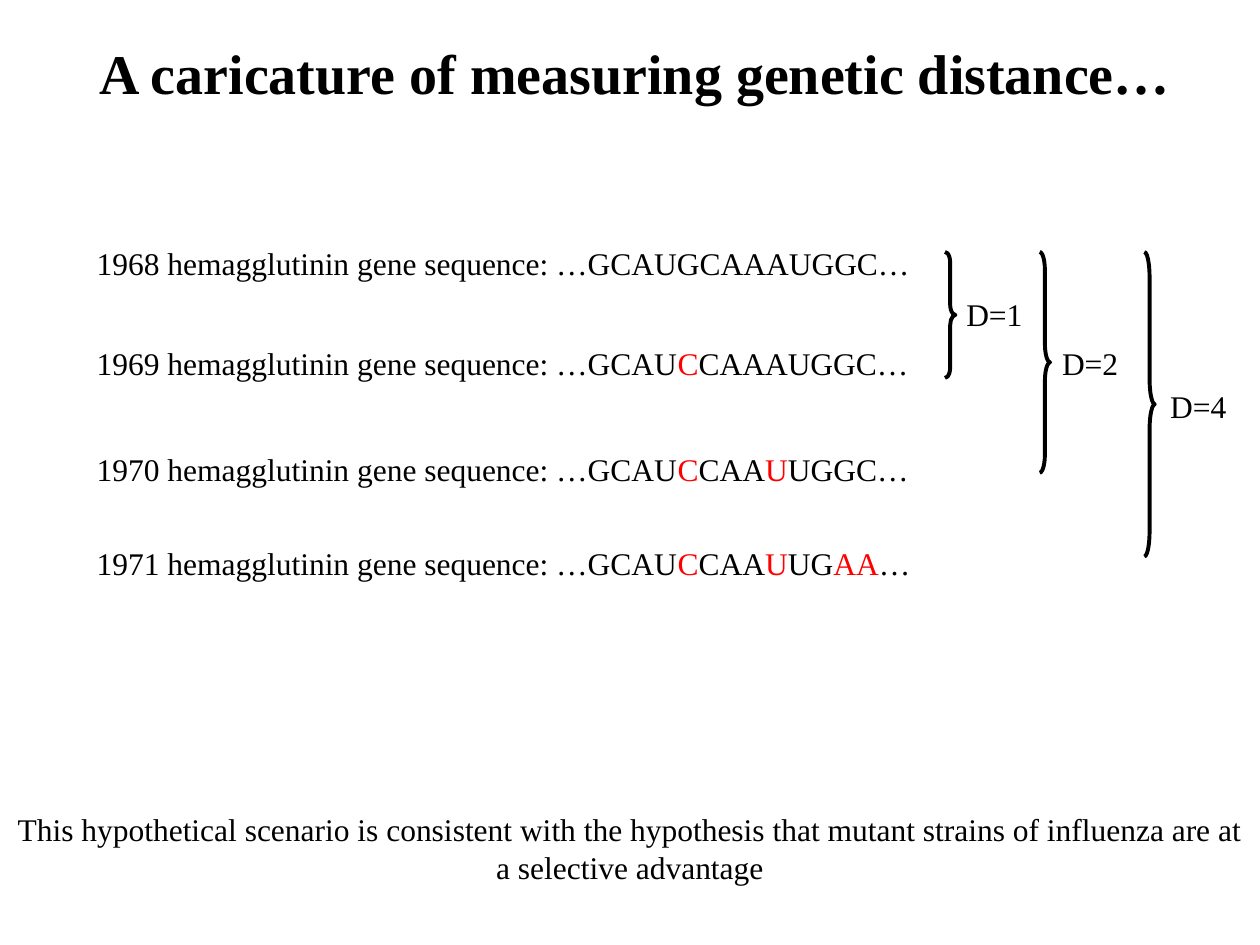
from dataclasses import dataclass
from itertools import groupby

from pptx import Presentation
from pptx import util as u
from pptx.dml.color import RGBColor
from pptx.enum import shapes, text

FONT = "Times New Roman"
BLACK = "000000"
RED = "FF0000"
SLIDE_WIDTH = 25.4
BRACE_TOP = 5.08
BRACE_WIDTH = 0.21


@dataclass
class Strain:
    year: int
    bases: str
    top: float


@dataclass
class Distance:
    """A brace from the first strain to a later one, with its label."""
    strain: Strain
    left: float
    height: float
    label_left: float
    label_top: float


STRAINS = [
    Strain(1968, "GCAUGCAAAUGGC", 4.8),
    Strain(1969, "GCAUCCAAAUGGC", 6.81),
    Strain(1970, "GCAUCCAAUUGGC", 8.94),
    Strain(1971, "GCAUCCAAUUGAA", 10.85),
]
DISTANCES = [
    Distance(STRAINS[1], 19.05, 2.54, 19.23, 5.82),
    Distance(STRAINS[2], 20.96, 4.45, 21.16, 6.81),
    Distance(STRAINS[3], 23.07, 6.14, 23.34, 7.67),
]
CONCLUSION = ("This hypothetical scenario is consistent with the hypothesis that "
              "mutant strains of influenza are at a selective advantage")


def color(value: str) -> RGBColor:
    return RGBColor.from_string(value)


def format_run(run, size: float = 18, bold: bool = False, fill: str = BLACK) -> None:
    run.font.name = FONT
    run.font.size = u.Pt(size)
    run.font.bold = bold
    run.font.color.rgb = color(fill)


def place(shape, left: float, top: float, width: float, height: float) -> None:
    shape.left, shape.top = u.Cm(left), u.Cm(top)
    shape.width, shape.height = u.Cm(width), u.Cm(height)


def add_text(slide, left: float, top: float, width: float, height: float = 1.02,
             content: str = "", wrap: bool = False):
    """Add a text box and return its first paragraph."""
    box = slide.shapes.add_textbox(u.Cm(left), u.Cm(top), u.Cm(width), u.Cm(height))
    box.text_frame.word_wrap = wrap
    paragraph = box.text_frame.paragraphs[0]
    if content:
        paragraph.text = content
        format_run(paragraph.runs[0])
    return paragraph


def mutations(strain: Strain) -> list[bool]:
    return [base != first for base, first in zip(strain.bases, STRAINS[0].bases)]


def add_title(slide) -> None:
    title = slide.shapes.title
    place(title, 0, 0.64, SLIDE_WIDTH, 1.6)
    frame = title.text_frame
    frame.text = " A caricature of measuring genetic distance…"
    frame.vertical_anchor = text.MSO_ANCHOR.TOP
    frame.auto_size = text.MSO_AUTO_SIZE.NONE
    frame.paragraphs[0].alignment = text.PP_ALIGN.CENTER
    format_run(frame.paragraphs[0].runs[0], size=32, bold=True)


def add_strain(slide, strain: Strain) -> None:
    """Write the sequence, with its mutated bases in red."""
    paragraph = add_text(slide, 1.7, strain.top, 17.05)
    pieces = [(f"{strain.year} hemagglutinin gene sequence: …", BLACK)]
    marked = zip(strain.bases, mutations(strain))
    for mutated, group in groupby(marked, key=lambda pair: pair[1]):
        pieces.append(("".join(base for base, _ in group), RED if mutated else BLACK))
    pieces.append(("…", BLACK))
    for content, fill in pieces:
        run = paragraph.add_run()
        run.text = content
        format_run(run, fill=fill)


def add_distance(slide, distance: Distance) -> None:
    brace = slide.shapes.add_shape(
        shapes.MSO_SHAPE.RIGHT_BRACE, u.Cm(distance.left), u.Cm(BRACE_TOP),
        u.Cm(BRACE_WIDTH), u.Cm(distance.height))
    brace.adjustments[0] = distance.height / 12 / BRACE_WIDTH
    brace.shadow.inherit = False
    brace.fill.background()
    brace.line.color.rgb = color(BLACK)
    brace.line.width = u.Pt(2.25)
    add_text(slide, distance.label_left, distance.label_top, 1.65,
             content=f"D={sum(mutations(distance.strain))}")


def main() -> None:
    presentation = Presentation()
    presentation.slide_width = u.Cm(SLIDE_WIDTH)
    presentation.slide_height = u.Cm(19.05)
    slide = presentation.slides.add_slide(presentation.slide_layouts[5])

    add_title(slide)
    for strain in STRAINS:
        add_strain(slide, strain)
    for distance in DISTANCES:
        add_distance(slide, distance)
    conclusion = add_text(slide, 0, 16.2, SLIDE_WIDTH, 1.78, CONCLUSION, wrap=True)
    conclusion.alignment = text.PP_ALIGN.CENTER

    presentation.save("out.pptx")


if __name__ == "__main__":
    main()
